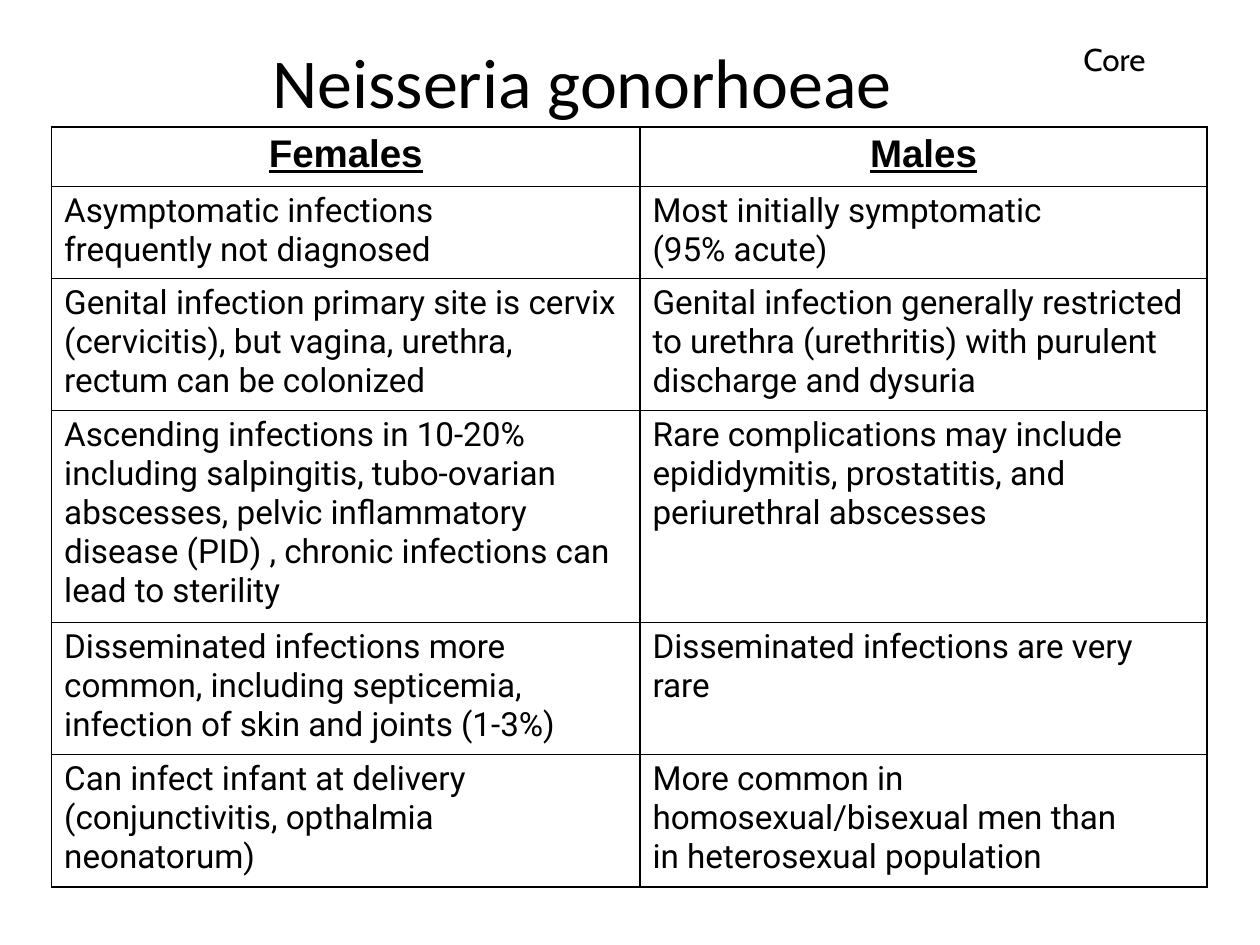
"""Build a slide comparing Neisseria gonorhoeae infection in females and males."""
from pptx import Presentation
from pptx.dml.color import RGBColor
from pptx.enum.text import MSO_ANCHOR as Anchor, MSO_AUTO_SIZE as AutoSize, PP_ALIGN as Align
from pptx.oxml import parse_xml
from pptx.oxml.ns import nsdecls
from pptx.util import Pt

BLACK = RGBColor(0, 0, 0)
HEADER_FONT = {"name": "Arial", "size": Pt(22), "bold": True, "underline": True}
BODY_FONT = {"name": "Roboto", "size": Pt(19), "bold": False}
TITLE_FONT = {"name": "Calibri", "size": Pt(40), "bold": False}
LABEL_FONT = {"name": "Cabin", "size": Pt(18)}
COLUMN_WIDTHS = [336.24, 324]
ROW_HEIGHTS = [33.84, 52.56, 75.6, 120.96, 75.6, 75.6]
ROWS = [
    ("Females", "Males"),
    ("Asymptomatic infections frequently not diagnosed",
     "Most initially symptomatic (95% acute)"),
    ("Genital infection primary site is cervix (cervicitis), but vagina, urethra, "
     "rectum can be colonized",
     "Genital infection generally restricted to urethra (urethritis) with purulent "
     "discharge and dysuria"),
    ("Ascending infections in 10-20% including salpingitis, tubo-ovarian abscesses, "
     "pelvic inflammatory disease (PID) , chronic infections can lead to sterility",
     "Rare complications may include epididymitis, prostatitis, and "
     "periurethral abscesses"),
    ("Disseminated infections more common, including septicemia, "
     "infection of skin and joints (1-3%)",
     "Disseminated infections are very rare"),
    ("Can infect infant at delivery (conjunctivitis, opthalmia neonatorum)",
     "More common in homosexual/bisexual men than in heterosexual population"),
]
RIGHT_MARGIN = 12
WIDE_RIGHT_MARGINS = {(1, 0): 43, (1, 1): 78, (4, 1): 24, (5, 1): 43}


def write(frame, text, font_values, align=Align.LEFT):
    para = frame.paragraphs[0]
    para.alignment = align
    span = para.add_run()
    span.text = text
    for name, value in font_values.items():
        setattr(span.font, name, value)
    span.font.color.rgb = BLACK


deck = Presentation()
deck.slide_width, deck.slide_height = Pt(720), Pt(540)
slide = deck.slides.add_slide(deck.slide_layouts[5])

table = slide.shapes.add_table(
    len(ROWS), len(COLUMN_WIDTHS), Pt(29.52), Pt(72.72),
    Pt(sum(COLUMN_WIDTHS)), Pt(sum(ROW_HEIGHTS))).table
table.first_row = table.horz_banding = False
for column, width in zip(table.columns, COLUMN_WIDTHS):
    column.width = Pt(width)
for row, height in zip(table.rows, ROW_HEIGHTS):
    row.height = Pt(height)

for row_index, texts in enumerate(ROWS):
    is_header = row_index == 0
    for column_index, text in enumerate(texts):
        cell = table.cell(row_index, column_index)
        right = WIDE_RIGHT_MARGINS.get((row_index, column_index), RIGHT_MARGIN)
        margins = {
            "margin_left": Pt(0 if is_header else 7.2),
            "margin_right": Pt(0 if is_header else right),
            "margin_top": Pt(3),
            "margin_bottom": Pt(0),
        }
        for name, value in margins.items():
            setattr(cell, name, value)
        properties = cell._tc.get_or_add_tcPr()
        for side in ("lnL", "lnR", "lnT", "lnB"):
            properties.append(parse_xml(
                f'<a:{side} {nsdecls("a")} w="{Pt(1)}"><a:solidFill>'
                f'<a:srgbClr val="{BLACK}"/></a:solidFill></a:{side}>'))
        cell.fill.background()
        if is_header:
            write(cell.text_frame, text, HEADER_FONT, Align.CENTER)
        else:
            write(cell.text_frame, text, BODY_FONT)

title = slide.shapes.title
title_place = {"left": Pt(154.8), "top": Pt(20.88), "width": Pt(416.16), "height": Pt(49.68)}
for name, value in title_place.items():
    setattr(title, name, value)
title_frame = {
    "margin_left": Pt(1), "margin_right": Pt(0), "margin_top": Pt(1), "margin_bottom": Pt(0),
    "vertical_anchor": Anchor.MIDDLE, "auto_size": AutoSize.SHAPE_TO_FIT_TEXT,
}
for name, value in title_frame.items():
    setattr(title.text_frame, name, value)
write(title.text_frame, "Neisseria gonorhoeae", TITLE_FONT)

label = slide.shapes.add_textbox(Pt(612), Pt(19.44), Pt(72), Pt(28.8))
label.text_frame.word_wrap = True
label.text_frame.auto_size = AutoSize.SHAPE_TO_FIT_TEXT
write(label.text_frame, "Core", LABEL_FONT)

deck.save("out.pptx")
